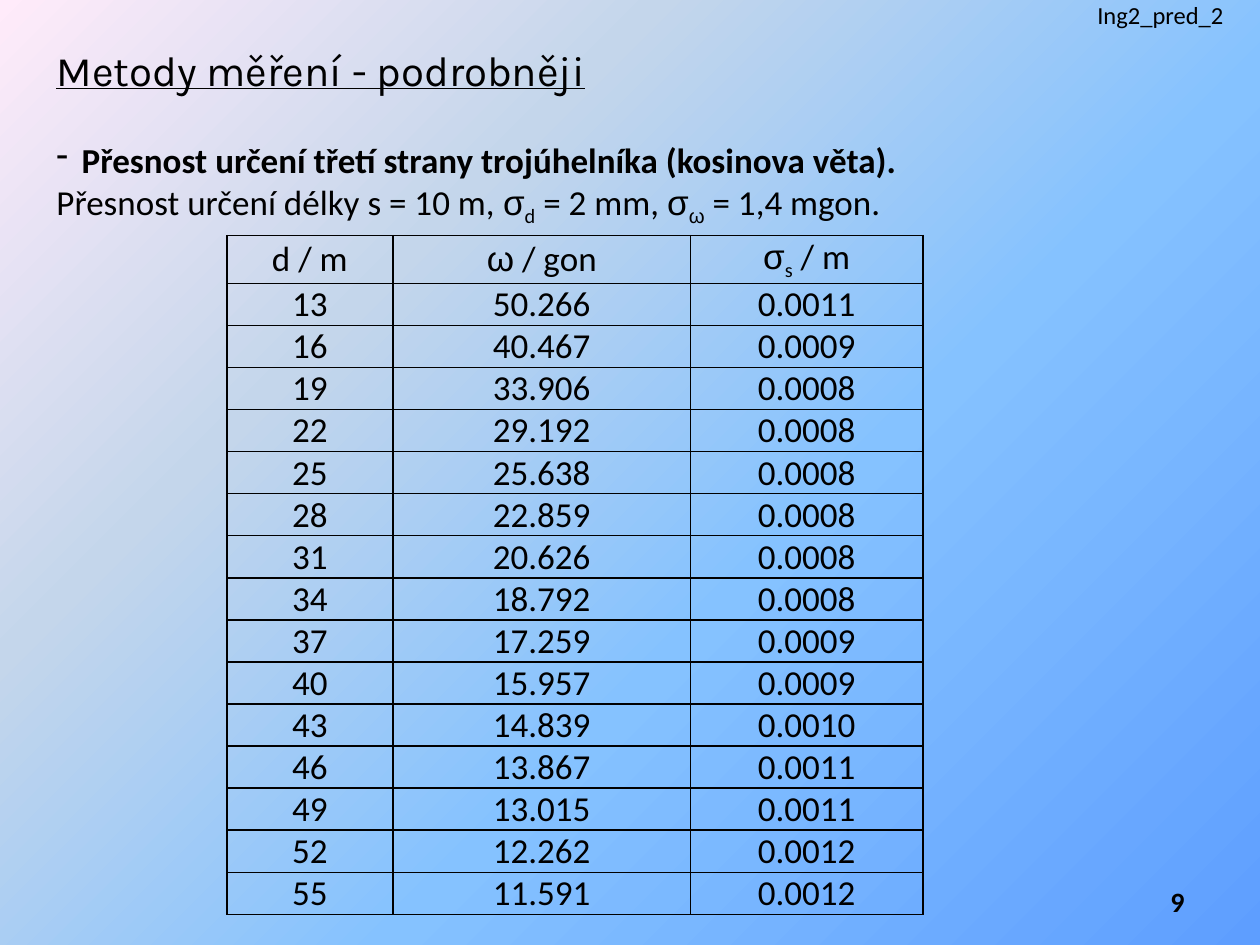
from dataclasses import dataclass

from lxml.etree import SubElement
from pptx import Presentation
from pptx.dml.color import RGBColor
from pptx.enum.text import MSO_ANCHOR as Anchor, MSO_AUTO_SIZE as AutoSize, PP_ALIGN as Align
from pptx.oxml.ns import qn
from pptx.util import Pt

BLACK = "000000"
BACKDROP = [(0, "5E9EFF"), (40, "85C2FF"), (70, "C4D6EB"), (100, "FFEBFA")]
COLUMN_WIDTHS = [95, 170, 132.8]
ROW_HEIGHT = 24
MEASUREMENTS = [
    ("13", "50.266", "0.0011"),
    ("16", "40.467", "0.0009"),
    ("19", "33.906", "0.0008"),
    ("22", "29.192", "0.0008"),
    ("25", "25.638", "0.0008"),
    ("28", "22.859", "0.0008"),
    ("31", "20.626", "0.0008"),
    ("34", "18.792", "0.0008"),
    ("37", "17.259", "0.0009"),
    ("40", "15.957", "0.0009"),
    ("43", "14.839", "0.0010"),
    ("46", "13.867", "0.0011"),
    ("49", "13.015", "0.0011"),
    ("52", "12.262", "0.0012"),
    ("55", "11.591", "0.0012"),
]


@dataclass
class Piece:
    text: str
    font: str = "Calibri"
    size: float = 20
    bold: bool = False
    underline: bool = False
    subscript: bool = False


@dataclass
class Line:
    pieces: list[Piece]
    align: Align = Align.LEFT
    indent: float = 0
    bullet: str = ""
    space_before: float = 0


@dataclass
class Box:
    left: float
    top: float
    width: float
    height: float
    lines: list[Line]
    anchor: Anchor = Anchor.TOP
    grows: bool = True


def greek(letter: str, subscript: bool = False) -> Piece:
    return Piece(letter, font="Arial", subscript=subscript)


def colour(value: str) -> RGBColor:
    return RGBColor.from_string(value)


def write_line(paragraph, line: Line) -> None:
    paragraph.alignment = line.align
    properties = paragraph._p.get_or_add_pPr()
    if line.space_before:
        paragraph.space_before = Pt(line.space_before)
    if line.indent:
        properties.set("marL", str(Pt(line.indent)))
        properties.set("indent", str(-Pt(line.indent)))
    if line.bullet:
        SubElement(properties, qn("a:buChar")).set("char", line.bullet)
    for piece in line.pieces:
        run = paragraph.add_run()
        run.text = piece.text
        run.font.name = piece.font
        run.font.size = Pt(piece.size)
        run.font.bold = piece.bold
        run.font.underline = piece.underline
        run.font.color.rgb = colour(BLACK)
        if piece.subscript:
            run._r.get_or_add_rPr().set("baseline", "-25000")


def draw_box(slide, box: Box) -> None:
    frame = slide.shapes.add_textbox(
        Pt(box.left), Pt(box.top), Pt(box.width), Pt(box.height)).text_frame
    frame.word_wrap = True
    frame.vertical_anchor = box.anchor
    frame.auto_size = AutoSize.SHAPE_TO_FIT_TEXT if box.grows else AutoSize.NONE
    for index, line in enumerate(box.lines):
        write_line(frame.add_paragraph() if index else frame.paragraphs[0], line)


def draw_cell(cell, pieces: list[Piece]) -> None:
    cell.vertical_anchor = Anchor.MIDDLE
    cell.margin_left = cell.margin_right = Pt(5)
    cell.margin_top = cell.margin_bottom = Pt(0)
    properties = cell._tc.get_or_add_tcPr()
    for side in ("a:lnL", "a:lnR", "a:lnT", "a:lnB"):
        border = SubElement(properties, qn(side), w=str(Pt(1)))
        fill = SubElement(border, qn("a:solidFill"))
        SubElement(fill, qn("a:srgbClr")).set("val", str(colour(BLACK)))
    cell.fill.background()
    write_line(cell.text_frame.paragraphs[0], Line(pieces, Align.CENTER))


def draw_table(slide, left: float, top: float, rows: list[list[list[Piece]]]) -> None:
    table = slide.shapes.add_table(
        len(rows), len(COLUMN_WIDTHS), Pt(left), Pt(top),
        Pt(sum(COLUMN_WIDTHS)), Pt(ROW_HEIGHT * len(rows))).table
    table.first_row = table.horz_banding = False
    for column, width in zip(table.columns, COLUMN_WIDTHS):
        column.width = Pt(width)
    for row, contents in zip(table.rows, rows):
        for cell, pieces in zip(row.cells, contents):
            draw_cell(cell, pieces)


def paint_background(slide) -> None:
    fill = slide.background.fill
    fill.gradient()
    fill.gradient_angle = 135
    stops = next(slide.background._cSld.iter(qn("a:gsLst")))
    for stop in list(stops):
        stops.remove(stop)
    for position, value in BACKDROP:
        stop = SubElement(stops, qn("a:gs"), pos=str(position * 1000))
        SubElement(stop, qn("a:srgbClr")).set("val", str(colour(value)))


def main() -> None:
    presentation = Presentation()
    presentation.slide_width, presentation.slide_height = Pt(720), Pt(540)
    slide = presentation.slides.add_slide(presentation.slide_layouts[6])
    paint_background(slide)

    explanation = Box(25.2, 21.6, 669.6, 108.7, [
        Line([Piece("Metody měření - podrobněji", "Karla", 24, underline=True)], indent=36),
        Line([Piece("Přesnost určení třetí strany trojúhelníka (kosinova věta).", bold=True)],
             indent=14.4, bullet="-", space_before=25),
        Line([Piece("Přesnost určení délky s = 10 m, "), greek("σ"), Piece("d", subscript=True),
              Piece(" = 2 mm, "), greek("σ"), greek("ω", subscript=True),
              Piece(" = 1,4 mgon.")], indent=14.4),
    ])
    lecture = Box(576.7, -3.6, 129.6, 24.5,
                  [Line([Piece("Ing2_pred_2", size=14)], Align.RIGHT)])
    page_number = Box(516.2, 500.4, 167.8, 28.8,
                      [Line([Piece("9", size=16, bold=True)], Align.RIGHT)],
                      Anchor.MIDDLE, grows=False)
    for box in (explanation, lecture, page_number):
        draw_box(slide, box)

    header = [
        [Piece("d / m")],
        [greek("ω"), Piece(" / gon")],
        [greek("σ"), Piece("s", subscript=True), Piece(" / m")],
    ]
    values = [[[Piece(value)] for value in row] for row in MEASUREMENTS]
    draw_table(slide, 129.6, 134.6, [header, *values])
    presentation.save("out.pptx")


if __name__ == "__main__":
    main()
